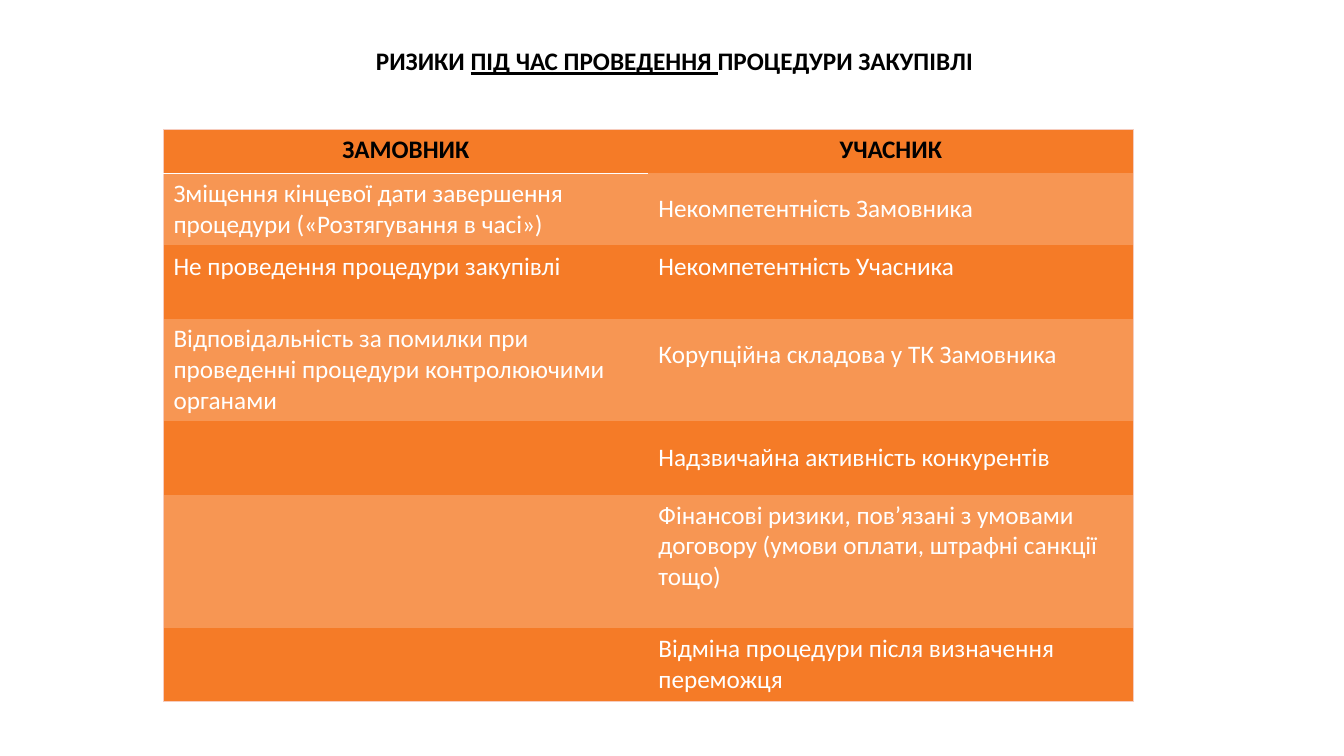
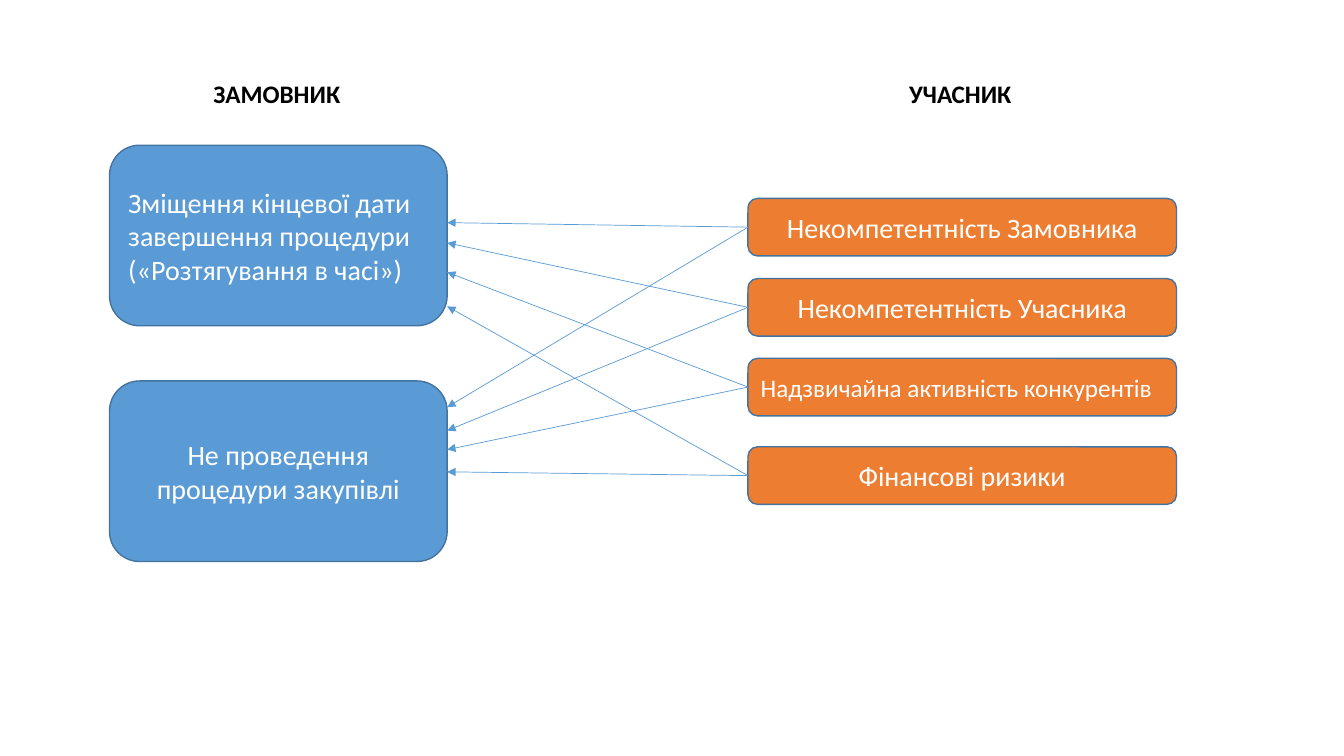
from dataclasses import dataclass
from typing import Any

from lxml.etree import SubElement
from pptx import Presentation
from pptx.dml.color import RGBColor
from pptx.enum.shapes import MSO_CONNECTOR, MSO_SHAPE
from pptx.enum.text import MSO_ANCHOR, MSO_AUTO_SIZE, PP_ALIGN
from pptx.oxml.ns import qn
from pptx.util import Cm, Pt

FONT = "Calibri"
BLACK, WHITE = "000000", "FFFFFF"
BLUE, NAVY, ORANGE = "5B9BD5", "43739E", "ED7D31"
DARK, LIGHT, EDGE = "F57B27", "F79653", "F6CCBE"
PLAIN_STYLE = "{2D5ABB26-0587-4C30-8999-92F81FD0307C}"
LEFT, CENTER = PP_ALIGN.LEFT, PP_ALIGN.CENTER
TOP, MIDDLE = MSO_ANCHOR.TOP, MSO_ANCHOR.MIDDLE

BUYER, BIDDER = "ЗАМОВНИК", "УЧАСНИК"
DELAY = "Зміщення кінцевої дати завершення процедури («Розтягування в часі»)"
CANCEL = "Не проведення процедури закупівлі"
WEAK_BUYER = "Некомпетентність Замовника"
WEAK_BIDDER = "Некомпетентність Учасника"
RIVALS = "Надзвичайна активність конкурентів"


@dataclass(frozen=True)
class Row:
    height: float
    left: str
    right: str
    raised: tuple[bool, bool] = (False, False)


@dataclass(frozen=True)
class Box:
    text: str
    top: float
    size: int = 20
    align: PP_ALIGN = CENTER


@dataclass(frozen=True)
class Stack:
    """A column of equal boxes."""
    left: float
    width: float
    height: float
    color: str
    boxes: tuple[Box, ...]


ROWS = (
    Row(1.11, BUYER, BIDDER),
    Row(1.76, DELAY, WEAK_BUYER),
    Row(1.86, CANCEL, WEAK_BIDDER, (True, True)),
    Row(2.55, "Відповідальність за помилки при проведенні процедури "
        "контролюючими органами", "Корупційна складова у ТК Замовника",
        (False, True)),
    Row(1.86, "", RIVALS),
    Row(3.3, "", "Фінансові ризики, пов’язані з умовами договору "
        "(умови оплати, штрафні санкції тощо)", (False, True)),
    Row(1.86, "", "Відміна процедури після визначення переможця"),
)
RISKS = Stack(2.76, 8.51, 4.55, BLUE, (
    Box(DELAY, 3.66, align=LEFT), Box(CANCEL, 9.6)))
CAUSES = Stack(18.85, 10.8, 1.45, ORANGE, (
    Box(WEAK_BUYER, 5), Box(WEAK_BIDDER, 7.02),
    Box(RIVALS, 9.03, 18, LEFT), Box("Фінансові ризики", 11.26)))
# Arrow ends on each risk box, one per cause
ENDS = ((5.61, 6.12, 6.86, 7.72), (10.26, 10.85, 11.33, 11.89))


def rgb(code: str) -> RGBColor:
    return RGBColor.from_string(code)


def write(frame: Any, text: str, *, size: int = 18, color: str = BLACK,
          bold: bool = False, align: PP_ALIGN = LEFT) -> None:
    """Fill a frame; parts between underscores are underlined."""
    frame.word_wrap = True
    para = frame.paragraphs[0]
    para.alignment = align
    for i, part in enumerate(text.split("_")):
        run = para.add_run()
        run.text = part
        font = run.font
        font.name, font.size, font.bold = FONT, Pt(size), bold
        font.color.rgb = rgb(color)
        if i % 2:
            font.underline = True


def edge(cell: Any, side: str, color: str, width: float) -> None:
    line = SubElement(cell._tc.get_or_add_tcPr(), qn(f"a:ln{side}"),
                      w=str(Pt(width)))
    fill = SubElement(line, qn("a:solidFill"))
    SubElement(fill, qn("a:srgbClr"), val=color)


def add_grid(slide: Any) -> None:
    total = sum(row.height for row in ROWS)
    table = slide.shapes.add_table(len(ROWS), 2, Cm(4.12), Cm(3.26),
                                   Cm(24.44), Cm(total)).table
    table._tbl.tblPr.find(qn("a:tableStyleId")).text = PLAIN_STYLE
    last = len(ROWS) - 1
    for r, row in enumerate(ROWS):
        table.rows[r].height = Cm(row.height)
        head = r == 0
        for c, text in enumerate((row.left, row.right)):
            cell = table.cell(r, c)
            edge(cell, "LR"[c], EDGE, 0.5)
            if head:
                edge(cell, "T", EDGE, 0.5)
            if head and c == 0:
                edge(cell, "B", WHITE, 1.5)
            if r == last:
                edge(cell, "B", EDGE, 0.5)
            cell.fill.solid()
            cell.fill.fore_color.rgb = rgb(LIGHT if r % 2 else DARK)
            cell.vertical_anchor = TOP if head else MIDDLE
            if row.raised[c]:
                cell.margin_bottom = Cm(0.89)
            if text:
                write(cell.text_frame, text, bold=head,
                      color=BLACK if head else WHITE,
                      align=CENTER if head else LEFT)


def add_label(slide: Any, text: str, left: float) -> None:
    box = slide.shapes.add_textbox(Cm(left), Cm(1.85), Cm(3.76), Cm(1.02))
    write(box.text_frame, text, bold=True)


def add_stack(slide: Any, stack: Stack) -> None:
    for box in stack.boxes:
        shape = slide.shapes.add_shape(
            MSO_SHAPE.ROUNDED_RECTANGLE, Cm(stack.left), Cm(box.top),
            Cm(stack.width), Cm(stack.height))
        shape.shadow.inherit = False
        shape.fill.solid()
        shape.fill.fore_color.rgb = rgb(stack.color)
        shape.line.color.rgb = rgb(NAVY)
        shape.line.width = Pt(1)
        shape.text_frame.vertical_anchor = MIDDLE
        write(shape.text_frame, box.text, size=box.size, color=WHITE,
              align=box.align)


def add_arrow(slide: Any, start: float, end: float) -> None:
    """Link a cause at height start to a risk at height end."""
    arrow = slide.shapes.add_connector(
        MSO_CONNECTOR.STRAIGHT, Cm(CAUSES.left), Cm(start),
        Cm(RISKS.left + RISKS.width), Cm(end))
    arrow.line.color.rgb = rgb(BLUE)
    arrow.line.width = Pt(0.5)
    SubElement(arrow.line._get_or_add_ln(), qn("a:tailEnd"), type="triangle")
    SubElement(arrow._element.spPr, qn("a:effectLst"))


def add_risks(deck: Any) -> None:
    slide = deck.slides.add_slide(deck.slide_layouts[5])
    title = slide.shapes.title
    title.left, title.top = Cm(9.22), Cm(1.02)
    title.width, title.height = Cm(16), Cm(2.2)
    frame = title.text_frame
    frame.auto_size = MSO_AUTO_SIZE.NONE
    frame.vertical_anchor = TOP
    write(frame, "РИЗИКИ _ПІД ЧАС ПРОВЕДЕННЯ _ПРОЦЕДУРИ ЗАКУПІВЛІ", bold=True)
    add_grid(slide)


def add_links(deck: Any) -> None:
    slide = deck.slides.add_slide(deck.slide_layouts[6])
    add_label(slide, BUYER, 5.13)
    add_label(slide, BIDDER, 22.66)
    add_stack(slide, RISKS)
    add_stack(slide, CAUSES)
    for ends in ENDS:
        for box, end in zip(CAUSES.boxes, ends):
            add_arrow(slide, box.top + CAUSES.height / 2, end)


def main() -> None:
    deck = Presentation()
    deck.slide_width, deck.slide_height = Cm(33.87), Cm(19.05)
    add_risks(deck)
    add_links(deck)
    deck.save("out.pptx")


if __name__ == "__main__":
    main()
